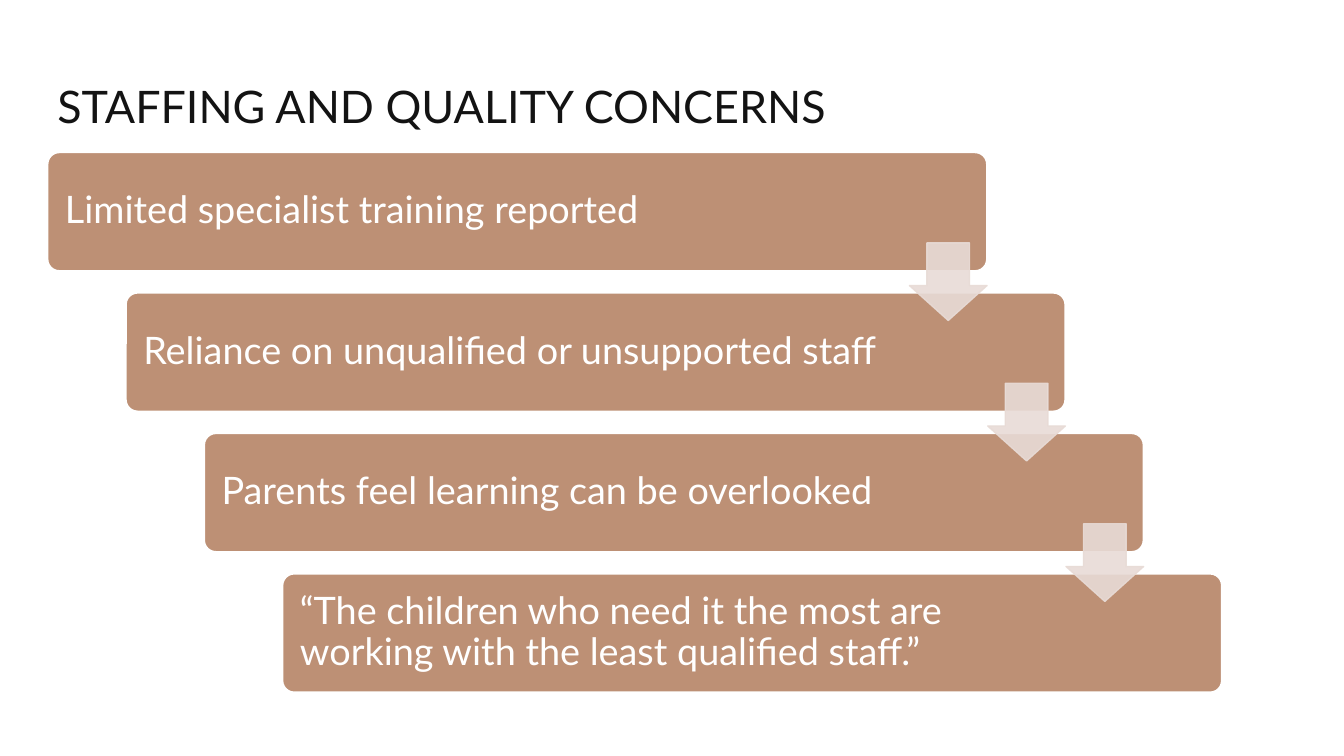
from pptx import Presentation
from pptx.dml.color import RGBColor
from pptx.enum.shapes import MSO_SHAPE as Preset
from pptx.enum.text import MSO_ANCHOR as Anchor, PP_ALIGN as Align
from pptx.oxml.ns import qn
from pptx.util import Inches, Pt
from lxml.etree import SubElement

COLORS = {"title": "131313", "bar": "BD9075", "arrow": "E8DBD6", "white": "FFFFFF"}
CONCERNS = [
    "Limited specialist training reported",
    "Reliance on unqualified or unsupported staff",
    "Parents feel learning can be overlooked",
    "“The children who need it the most are working with the least qualified staff.”",
]
FIRST_LEFT, FIRST_TOP = 0.47, 1.51
LAST_LEFT, LAST_TOP = 2.8, 5.69
BAR_WIDTH, BAR_HEIGHT = 9.32, 1.18
ARROW_SIZE, ARROW_DROP = 0.77, 0.9


class StaircaseSlide:
    """Draws a title, stepped bars and down arrows in one style."""

    font_name = "Lato"

    def __init__(self, slide):
        self.slide = slide

    def color(self, name):
        return RGBColor.from_string(COLORS[name])

    def add_wording(self, frame, wording, size, color, anchor, insets):
        frame.word_wrap = True
        frame.vertical_anchor = anchor
        left, top, right, bottom = map(Inches, insets)
        frame.margin_left, frame.margin_top = left, top
        frame.margin_right, frame.margin_bottom = right, bottom
        paragraph = frame.paragraphs[0]
        paragraph.alignment = Align.LEFT
        paragraph.line_spacing = 0.9
        run = paragraph.add_run()
        run.text = wording
        run.font.name = self.font_name
        run.font.size = Pt(size)
        run.font.color.rgb = self.color(color)

    def title(self, wording, left, top, width, height):
        box = self.slide.shapes.add_textbox(*map(Inches, (left, top, width, height)))
        insets = (0.1, 0.05, 0.1, 0.05)
        self.add_wording(box.text_frame, wording, 32, "title", Anchor.BOTTOM, insets)

    def preset(self, kind, bounds, adjustments, fill, line, line_width):
        shape = self.slide.shapes.add_shape(kind, *map(Inches, bounds))
        shape.shadow.inherit = False
        for index, value in enumerate(adjustments):
            shape.adjustments[index] = value
        shape.fill.solid()
        shape.fill.fore_color.rgb = self.color(fill)
        shape.line.color.rgb = self.color(line)
        shape.line.width = Pt(line_width)
        return shape

    def bar(self, wording, left, top):
        bounds = (left, top, BAR_WIDTH, BAR_HEIGHT)
        bar = self.preset(Preset.ROUNDED_RECTANGLE, bounds, [0.1], "bar", "white", 1.5)
        insets = (0.14, 0.14, 1.7, 0.14)
        self.add_wording(bar.text_frame, wording, 27, "white", Anchor.MIDDLE, insets)

    def arrow(self, left, top):
        bounds = (left, top, ARROW_SIZE, ARROW_SIZE)
        arrow = self.preset(Preset.DOWN_ARROW, bounds, [0.55, 0.45], "arrow", "arrow", 1)
        for tint in arrow.element.spPr.iter(qn("a:srgbClr")):
            SubElement(tint, qn("a:alpha"), val="90000")


def main():
    deck = Presentation()
    deck.slide_width, deck.slide_height = Inches(13.33), Inches(7.5)
    staircase = StaircaseSlide(deck.slides.add_slide(deck.slide_layouts[6]))
    staircase.title("STAFFING AND QUALITY CONCERNS", 0.47, 0.31, 11.65, 1.06)

    last = len(CONCERNS) - 1
    steps = [
        (FIRST_LEFT + (LAST_LEFT - FIRST_LEFT) * i / last,
         FIRST_TOP + (LAST_TOP - FIRST_TOP) * i / last)
        for i in range(len(CONCERNS))
    ]
    for concern, (left, top) in zip(CONCERNS, steps):
        staircase.bar(concern, left, top)
    for left, top in steps[:-1]:
        staircase.arrow(left + BAR_WIDTH - ARROW_SIZE, top + ARROW_DROP)

    deck.save("out.pptx")


if __name__ == "__main__":
    main()
